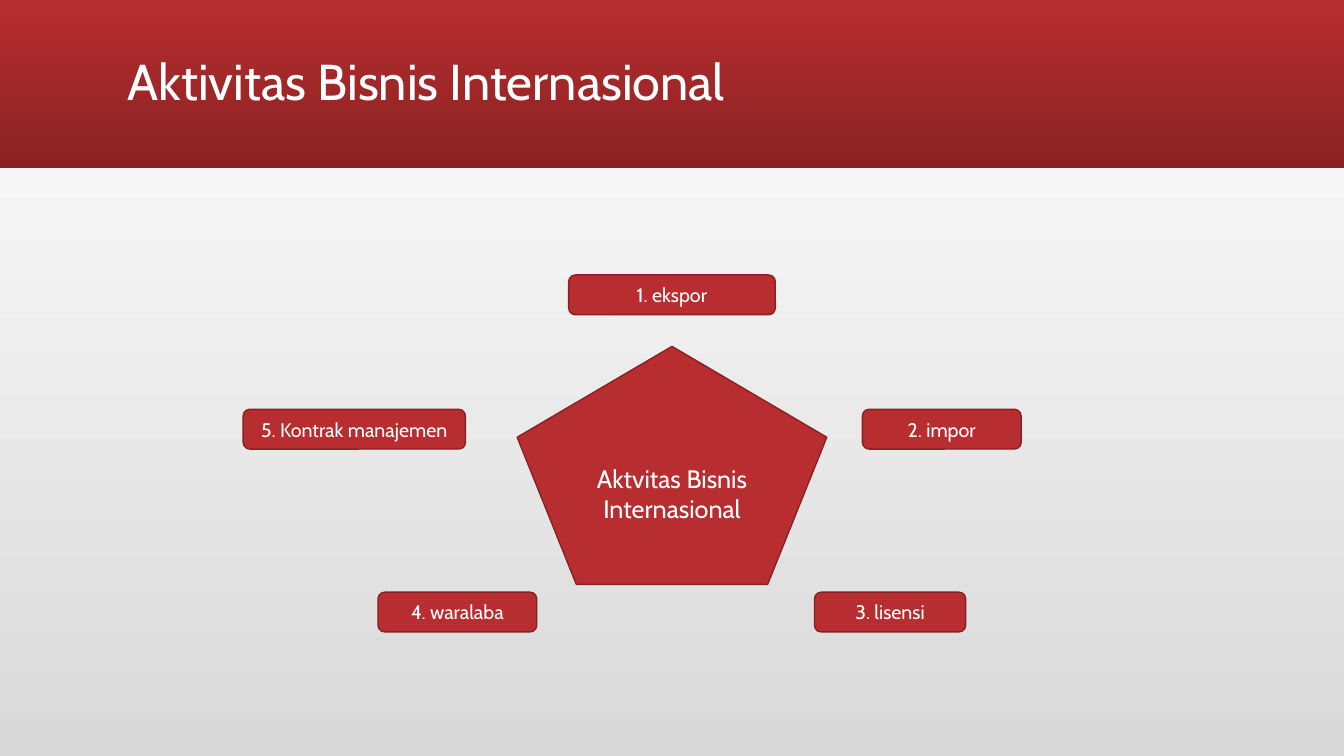
from pptx import Presentation
from pptx.dml.color import RGBColor
from pptx.enum.shapes import MSO_SHAPE
from pptx.enum.text import MSO_ANCHOR, PP_ALIGN
from pptx.util import Pt

RECTANGLE = MSO_SHAPE.RECTANGLE
PENTAGON = MSO_SHAPE.REGULAR_PENTAGON
ROUNDED = MSO_SHAPE.ROUNDED_RECTANGLE
MIDDLE = MSO_ANCHOR.MIDDLE
LEFT, CENTER = PP_ALIGN.LEFT, PP_ALIGN.CENTER

FONT = "Cabin"
RED, DARK_RED, EDGE_RED = "B82D2F", "8A2223", "882123"
WHITE, GRAY = "FFFFFF", "D9D9D9"

SLIDE_WIDTH, SLIDE_HEIGHT = 960, 540
HEADER_HEIGHT = 120
ACTIVITY_HEIGHT = 28.4

# Text, left, top, width
ACTIVITIES = [
    ("1. ekspor", 406.2, 196.4, 147.6),
    ("2. impor", 616, 292.4, 113.4),
    ("3. lisensi", 581.8, 423, 108),
    ("4. waralaba", 270, 423, 113.4),
    ("5. Kontrak manajemen", 173.7, 292.4, 158.8),
]


def rgb(value):
    return RGBColor.from_string(value)


def set_gradient(fill, colors, angle):
    fill.gradient()
    fill.gradient_angle = angle
    for stop, color in zip(fill.gradient_stops, colors):
        stop.color.rgb = rgb(color)


def write_text(shape, text, size, align, line_spacing=1.0):
    frame = shape.text_frame
    frame.word_wrap = True
    frame.vertical_anchor = MIDDLE
    paragraph = frame.paragraphs[0]
    paragraph.alignment = align
    paragraph.line_spacing = line_spacing
    run = paragraph.add_run()
    run.text = text
    font_format = {"name": FONT, "size": Pt(size)}
    for attribute, value in font_format.items():
        setattr(run.font, attribute, value)
    run.font.color.rgb = rgb(WHITE)


def add_header(slide, text):
    band = slide.shapes.add_shape(RECTANGLE, 0, 0, Pt(SLIDE_WIDTH), Pt(HEADER_HEIGHT))
    band.shadow.inherit = False
    band.line.fill.background()
    set_gradient(band.fill, (RED, DARK_RED), 270)
    title = slide.shapes.add_textbox(Pt(84), Pt(8), Pt(792), Pt(104.4))
    write_text(title, text, 36, LEFT, 0.9)


def add_node(slide, kind, text, size, left, top, width, height):
    node = slide.shapes.add_shape(kind, Pt(left), Pt(top), Pt(width), Pt(height))
    node.shadow.inherit = False
    node.fill.solid()
    node.fill.fore_color.rgb = rgb(RED)
    node.line.color.rgb = rgb(EDGE_RED)
    node.line.width = Pt(1)
    write_text(node, text, size, CENTER)


def main():
    deck = Presentation()
    deck.slide_width, deck.slide_height = Pt(SLIDE_WIDTH), Pt(SLIDE_HEIGHT)
    slide = deck.slides.add_slide(deck.slide_layouts[6])

    # Background and header
    set_gradient(slide.background.fill, (GRAY, WHITE), 90)
    add_header(slide, "Aktivitas Bisnis Internasional")

    # Central topic
    add_node(slide, PENTAGON, "Aktvitas Bisnis Internasional", 18, 369.4, 247.4, 221.2, 170)

    # Activities around it
    for text, left, top, width in ACTIVITIES:
        add_node(slide, ROUNDED, text, 14, left, top, width, ACTIVITY_HEIGHT)

    deck.save("out.pptx")


if __name__ == "__main__":
    main()
